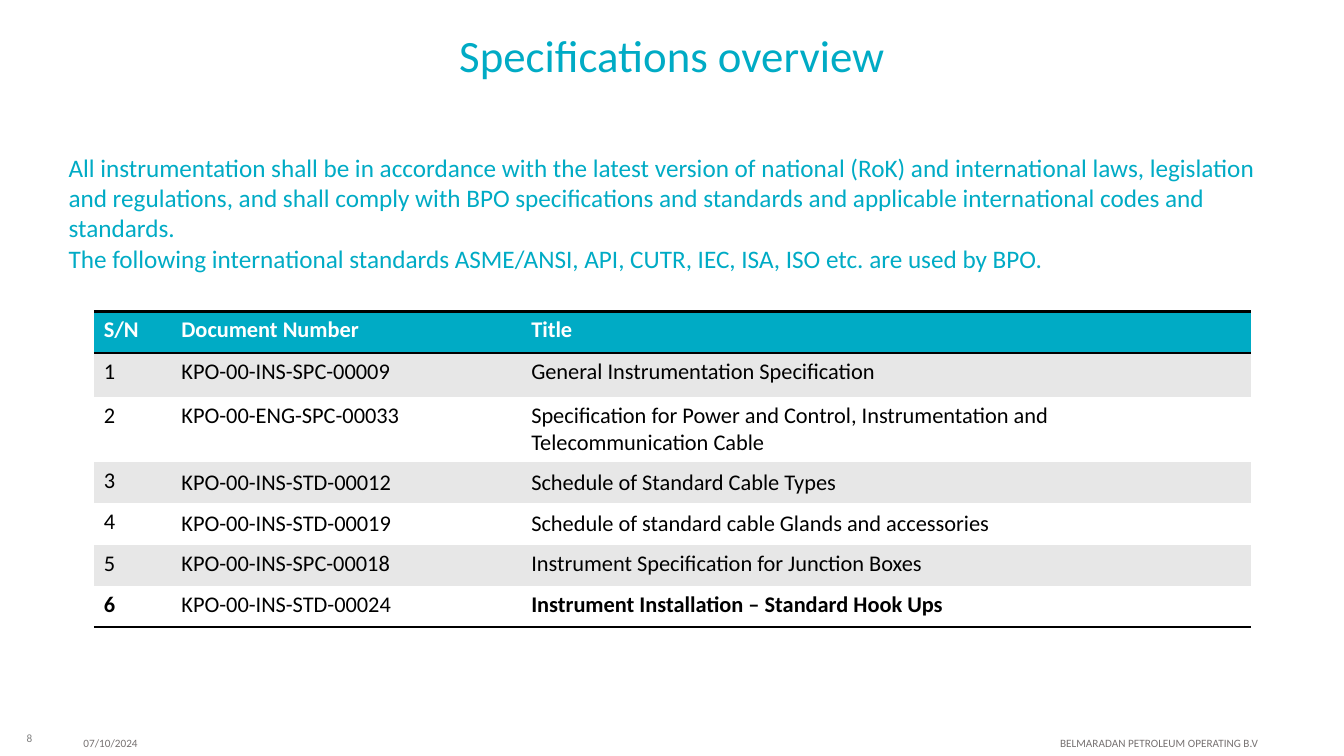
from itertools import product
from lxml.etree import SubElement
from pptx import Presentation
from pptx.dml.color import RGBColor
from pptx.enum.text import MSO_ANCHOR, MSO_AUTO_SIZE, PP_ALIGN
from pptx.oxml import parse_xml
from pptx.oxml.ns import nsdecls, qn
from pptx.util import Inches, Pt

HEADING = "Specifications overview"
INTRO = [
    "All instrumentation shall be in accordance with the latest version of national (RoK) and "
    "international laws, legislation and regulations, and shall comply with BPO specifications "
    "and standards and applicable international codes and standards.",
    "The following international standards ASME/ANSI, API, CUTR, IEC, ISA, ISO etc. are used by BPO.",
]
SPECIFICATIONS = [
    ("S/N", "Document Number", "Title"),
    ("1", "KPO-00-INS-SPC-00009", "General Instrumentation Specification"),
    ("2", "KPO-00-ENG-SPC-00033",
     "Specification for Power and Control, Instrumentation and\nTelecommunication Cable"),
    ("3", "KPO-00-INS-STD-00012", "Schedule of Standard Cable Types"),
    ("4", "KPO-00-INS-STD-00019", "Schedule of standard cable Glands and accessories"),
    ("5", "KPO-00-INS-SPC-00018", "Instrument Specification for Junction Boxes"),
    ("6", "KPO-00-INS-STD-00024", "Instrument Installation – Standard Hook Ups"),
]
COLUMN_WIDTHS = [0.77, 3.47, 7.24]
ROW_HEIGHTS = [0.41, 0.44, 0.64, 0.41, 0.41, 0.41, 0.41]
BOLD_CELLS = {(0, 0), (0, 1), (0, 2), (6, 0), (6, 2)}
MIDDLE_CELLS = {(3, 1), (3, 2), (4, 1), (4, 2)}
RULES = {0: ("lnB", "lnT"), 6: ("lnB",)}
FOOTERS = [
    ("8", (0.01, 7.14, 0.41, 0.36), PP_ALIGN.RIGHT, "808080"),
    ("07/10/2024", (0.73, 7.23, 2, 0.28), PP_ALIGN.LEFT, "767171"),
    ("BELMARADAN PETROLEUM OPERATING B.V", (8.58, 7.23, 4, 0.28), PP_ALIGN.RIGHT, "767171"),
]
TEAL, WHITE, BLACK, GREY = "00ABC5", "FFFFFF", "000000", "E7E7E7"
PLAIN_TABLE = "{2D5ABB26-0587-4C30-8999-92F81FD0307C}"


def rgb(code):
    return RGBColor.from_string(code)


def place(part, box):
    for side, length in zip(("left", "top", "width", "height"), box):
        setattr(part, side, Inches(length))


def write(frame, lines, size, color, align=PP_ALIGN.LEFT, bold=False, anchor=MSO_ANCHOR.TOP):
    frame.text = "\n".join(lines)
    for name, value in {"word_wrap": True, "vertical_anchor": anchor}.items():
        setattr(frame, name, value)
    for paragraph in frame.paragraphs:
        for name, value in {"alignment": align, "space_before": Pt(0)}.items():
            setattr(paragraph, name, value)
        for name, value in {"name": "Calibri", "size": Pt(size), "bold": bold}.items():
            setattr(paragraph.font, name, value)
        paragraph.font.color.rgb = rgb(color)


def drop_bullet(paragraph):
    properties = paragraph._p.get_or_add_pPr()
    for name in ("marL", "indent"):
        properties.set(name, "0")
    SubElement(properties, qn("a:buNone"))


def rule(cell, edge):
    cell._tc.get_or_add_tcPr().insert(0, parse_xml(
        f'<a:{edge} {nsdecls("a")} w="{Pt(2)}"><a:solidFill>'
        f'<a:srgbClr val="{BLACK}"/></a:solidFill></a:{edge}>'))


def add_specifications(slide):
    table = slide.shapes.add_table(
        len(SPECIFICATIONS), len(COLUMN_WIDTHS), Inches(0.93), Inches(3.09),
        Inches(sum(COLUMN_WIDTHS)), Inches(sum(ROW_HEIGHTS))).table
    table._tbl.tblPr.find(qn("a:tableStyleId")).text = PLAIN_TABLE
    for column, width in zip(table.columns, COLUMN_WIDTHS):
        column.width = Inches(width)
    for row, height in zip(table.rows, ROW_HEIGHTS):
        row.height = Inches(height)
    for r, c in product(range(len(ROW_HEIGHTS)), range(len(COLUMN_WIDTHS))):
        cell = table.cell(r, c)
        write(cell.text_frame, [SPECIFICATIONS[r][c]], 16, BLACK if r else WHITE,
              bold=(r, c) in BOLD_CELLS)
        cell.vertical_anchor = MSO_ANCHOR.MIDDLE if (r, c) in MIDDLE_CELLS else MSO_ANCHOR.TOP
        cell.fill.solid()
        cell.fill.fore_color.rgb = rgb((GREY if r % 2 else WHITE) if r else TEAL)
        for edge in RULES.get(r, ()):
            rule(cell, edge)


def main():
    deck = Presentation()
    deck.slide_width, deck.slide_height = Inches(13.33), Inches(7.5)
    slide = deck.slides.add_slide(deck.slide_layouts[1])

    heading, intro = slide.placeholders
    place(heading, (0, 0.22, 13.33, 0.91))
    write(heading.text_frame, [HEADING], 32, TEAL, PP_ALIGN.CENTER)

    place(intro, (0.58, 1.46, 12.16, 1.31))
    write(intro.text_frame, INTRO, 18, TEAL)
    intro.text_frame.auto_size = MSO_AUTO_SIZE.NONE
    for paragraph in intro.text_frame.paragraphs:
        drop_bullet(paragraph)

    add_specifications(slide)

    for label, box, align, color in FOOTERS:
        footer = slide.shapes.add_textbox(*map(Inches, box))
        write(footer.text_frame, [label], 8, color, align, anchor=MSO_ANCHOR.MIDDLE)

    deck.save("out.pptx")


if __name__ == "__main__":
    main()
